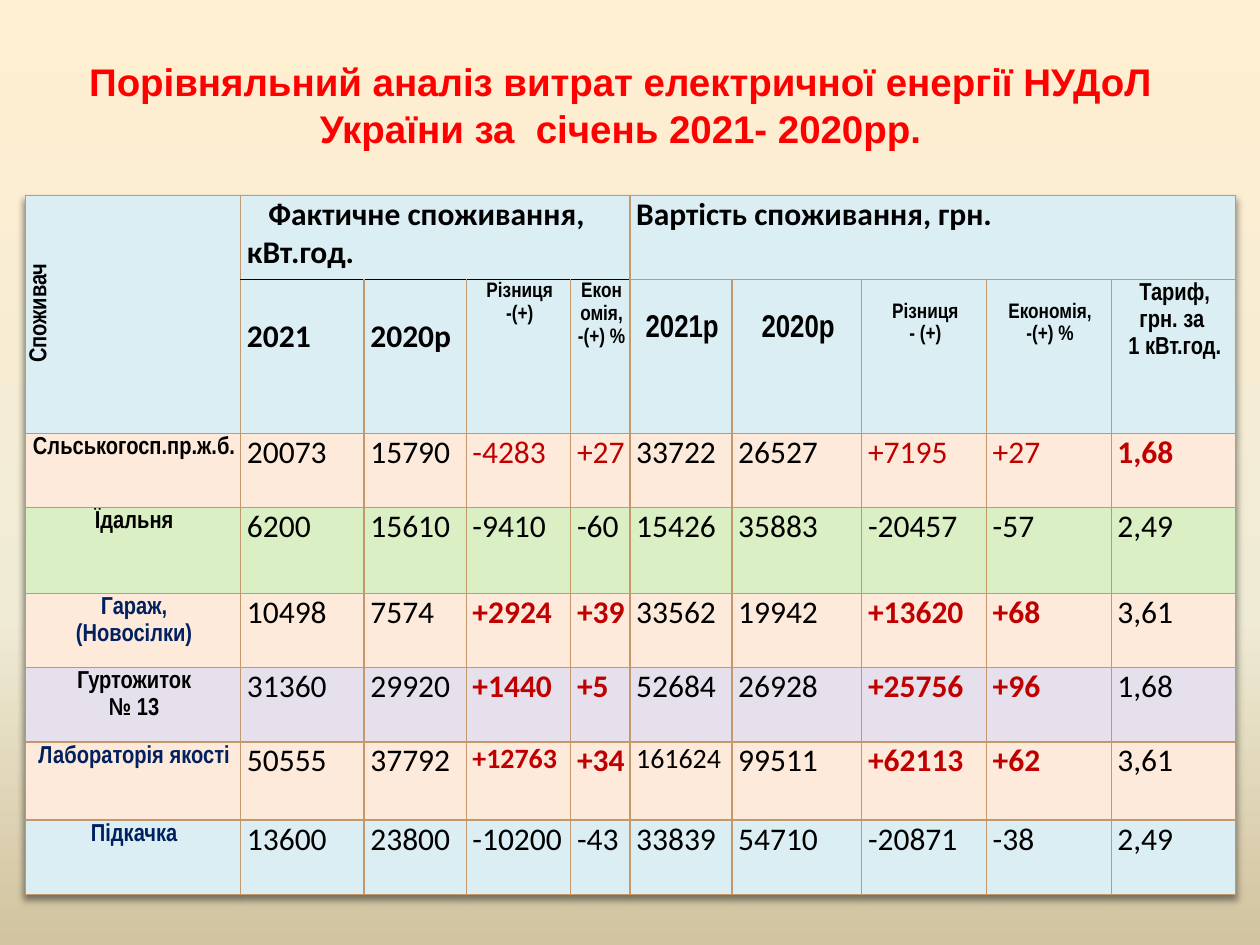
from copy import deepcopy

from lxml import etree
from pptx import Presentation
from pptx.dml.color import RGBColor
from pptx.enum.text import MSO_ANCHOR, PP_ALIGN
from pptx.oxml import parse_xml
from pptx.oxml.ns import qn
from pptx.util import Inches, Pt

CENTER = PP_ALIGN.CENTER
MIDDLE = MSO_ANCHOR.MIDDLE
NARROW = "Arial Narrow"
BODY = "Calibri"
COLORS = {
    "title": "FF0000", "black": "000000", "navy": "002060", "red": "C00000",
    "border": "C3986D", "blue": "DBEEF4", "peach": "FDEADA",
    "green": "DAEFC3", "lilac": "E6E0EC",
}
BACKGROUND_STOPS = [(0, "FFEFD1"), (0.65, "F0EBD5"), (1, "D1C39F")]

# Content
TITLE = "Порівняльний аналіз витрат електричної енергії НУДоЛ України за  січень 2021- 2020рр."
COLUMN_WIDTHS = [1.71, 0.98, 0.81, 0.83, 0.47, 0.81, 1.03, 0.99, 0.99, 0.99]
ROW_HEIGHTS = [0.67, 1.22, 0.59, 0.68, 0.59, 0.59, 0.62, 0.59]
# Column headings: lines, font, size, space above
HEADINGS = [
    (["2021"], BODY, 18, 0.3),
    (["2020р"], BODY, 18, 0.3),
    (["Різниця", "-(+)"], NARROW, 12, 0),
    (["Економія,", "-(+) %"], NARROW, 12, 0),
    (["2021р"], NARROW, 18, 0.24),
    (["2020р"], NARROW, 18, 0.24),
    (["Різниця", "- (+)"], NARROW, 12, 0.16),
    (["Економія,", "-(+) %"], NARROW, 12, 0.16),
    (["Тариф,", "грн. за ", "1 кВт.год."], NARROW, 14, 0),
]
# Consumers: name lines, name colour, fill, values, red columns, bold columns
CHANGES = (3, 4, 7, 8)
CONSUMERS = [
    (["Сльськогосп.пр.ж.б."], "black", "peach",
     ["20073", "15790", "-4283", "+27", "33722", "26527", "+7195", "+27", "1,68"],
     CHANGES + (9,), (9,)),
    (["Їдальня"], "black", "green",
     ["6200", "15610", "-9410", "-60", "15426", "35883", "-20457", "-57", "2,49"], (), ()),
    (["Гараж,", "(Новосілки)"], "navy", "peach",
     ["10498", "7574", "+2924", "+39", "33562", "19942", "+13620", "+68", "3,61"],
     CHANGES, CHANGES),
    (["Гуртожиток", "№ 13"], "black", "lilac",
     ["31360", "29920", "+1440", "+5", "52684", "26928", "+25756", "+96", "1,68"],
     CHANGES, CHANGES),
    (["Лабораторія якості"], "navy", "peach",
     ["50555", "37792", "+12763", "+34", "161624", "99511", "+62113", "+62", "3,61"],
     CHANGES, CHANGES),
    (["Підкачка"], "navy", "blue",
     ["13600", "23800", "-10200", "-43", "33839", "54710", "-20871", "-38", "2,49"], (), ()),
]
LONG_VALUES = ("+12763", "161624")


def write(frame, lines, font=BODY, size=18, color="black", bold=True, align=None, spacing=None):
    for index, line in enumerate(lines):
        paragraph = frame.add_paragraph() if index else frame.paragraphs[0]
        paragraph.alignment = align
        paragraph.line_spacing = spacing
        run = paragraph.add_run()
        run.text = line
        run.font.name = font
        run.font.size = Pt(size)
        run.font.bold = bold
        run.font.color.rgb = RGBColor.from_string(COLORS[color])


def write_cell(cell, lines, top=0, **text_format):
    cell.margin_top = Inches(top)
    if text_format.get("font") == NARROW:
        text_format.update(align=CENTER, spacing=1.15)
    write(cell.text_frame, lines, **text_format)


def make_border(side, color, width):
    line = etree.Element(qn("a:" + side), w=str(Pt(width)))
    fill = etree.SubElement(line, qn("a:solidFill"))
    etree.SubElement(fill, qn("a:srgbClr"), val=COLORS[color])
    return line


def style_cell(cell, fill, black_side=None):
    cell.margin_left = Inches(0.05)
    cell.margin_right = Inches(0.03)  # keeps the narrow column's values on one line
    cell.margin_top = cell.margin_bottom = 0
    cell.fill.solid()
    cell.fill.fore_color.rgb = RGBColor.from_string(COLORS[fill])
    properties = cell._tc.get_or_add_tcPr()
    for position, side in enumerate(("lnL", "lnR", "lnT", "lnB")):
        look = ("black", 1) if side == black_side else ("border", 0.79)
        properties.insert(position, make_border(side, *look))


presentation = Presentation()
presentation.slide_width = Inches(10)
presentation.slide_height = Inches(7.5)
slide = presentation.slides.add_slide(presentation.slide_layouts[6])

# Background gradient, top to bottom
background = slide.background.fill
background.gradient()
background.gradient_angle = 270
stop_list = background.gradient_stops[0]._gs.getparent()
stop_list.append(deepcopy(stop_list[0]))
for stop, (position, color) in zip(background.gradient_stops, BACKGROUND_STOPS):
    stop.position = position
    stop.color.rgb = RGBColor.from_string(color)

# Title, raised above the middle of its box
title = slide.shapes.add_textbox(Inches(0.2), Inches(0.21), Inches(9.45), Inches(1.61))
title.text_frame.word_wrap = True
title.text_frame.vertical_anchor = MIDDLE
title.text_frame.margin_bottom = Inches(0.42)
write(title.text_frame, [TITLE], font="Arial", size=22, color="title", align=CENTER)

# Table grid
table = slide.shapes.add_table(
    len(ROW_HEIGHTS), len(COLUMN_WIDTHS), Inches(0.2), Inches(1.55),
    Inches(sum(COLUMN_WIDTHS)), Inches(sum(ROW_HEIGHTS))).table
for column, width in zip(table.columns, COLUMN_WIDTHS):
    column.width = Inches(width)
for row, height in zip(table.rows, ROW_HEIGHTS):
    row.height = Inches(height)
table._tbl.tblPr.insert(0, parse_xml(
    '<a:effectLst xmlns:a="http://schemas.openxmlformats.org/drawingml/2006/main">'
    '<a:outerShdw blurRad="50800" dist="38100" dir="5400000" rotWithShape="0">'
    '<a:srgbClr val="000000"><a:alpha val="45000"/></a:srgbClr></a:outerShdw></a:effectLst>'))

fills = ["blue", "blue"] + [consumer[2] for consumer in CONSUMERS]
for row_index, fill in enumerate(fills):
    for column_index in range(len(COLUMN_WIDTHS)):
        black_side = None
        if row_index < 2 and 1 <= column_index <= 4:
            black_side = ("lnB", "lnT")[row_index]
        style_cell(table.cell(row_index, column_index), fill, black_side)

# Group headings
consumer_heading = table.cell(0, 0)
consumer_heading.merge(table.cell(1, 0))
consumer_heading.vertical_anchor = MIDDLE
consumer_heading._tc.get_or_add_tcPr().set("vert", "vert270")
write_cell(consumer_heading, ["Споживач"], font=NARROW, size=14)

usage_heading = table.cell(0, 1)
usage_heading.merge(table.cell(0, 4))
write_cell(usage_heading, ["Фактичне споживання, кВт.год."])
usage_properties = usage_heading.text_frame.paragraphs[0]._p.get_or_add_pPr()
usage_properties.set("marL", "0")
usage_properties.set("indent", str(Inches(0.17)))

cost_heading = table.cell(0, 5)
cost_heading.merge(table.cell(0, 9))
write_cell(cost_heading, ["Вартість споживання, грн."])

# Column headings
for column_index, (lines, font, size, top) in enumerate(HEADINGS, 1):
    write_cell(table.cell(1, column_index), lines, top=top, font=font, size=size)

# Consumer rows
for row_index, (name, color, _, values, red, bold) in enumerate(CONSUMERS, 2):
    write_cell(table.cell(row_index, 0), name, font=NARROW, size=14, color=color)
    for column_index, value in enumerate(values, 1):
        write_cell(table.cell(row_index, column_index), [value],
                   size=16 if value in LONG_VALUES else 18,
                   color="red" if column_index in red else "black",
                   bold=column_index in bold)

presentation.save("out.pptx")
